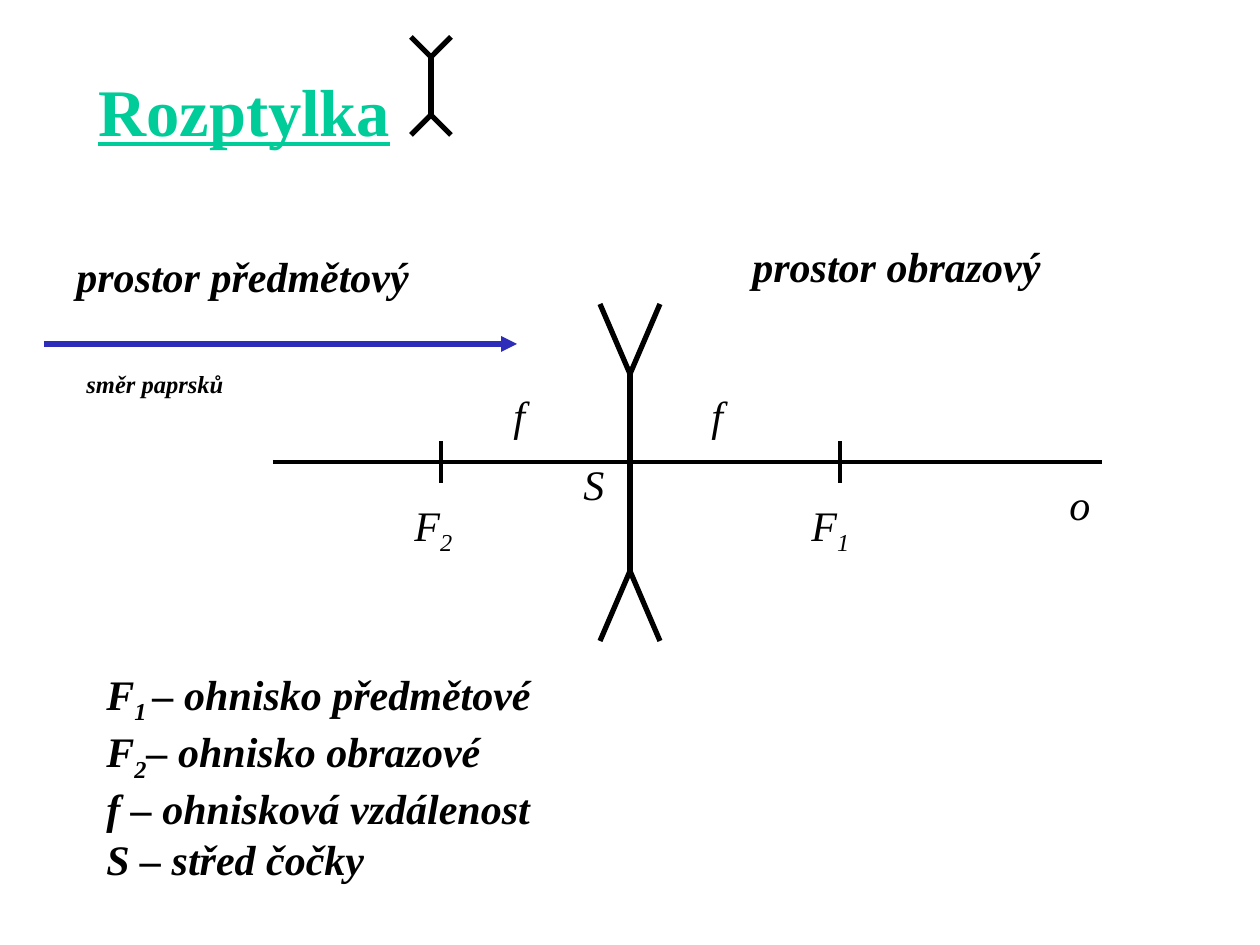
from lxml.etree import SubElement
from pptx import Presentation
from pptx.dml.color import RGBColor
from pptx.enum.shapes import MSO_CONNECTOR
from pptx.enum.text import MSO_ANCHOR
from pptx.oxml.ns import qn
from pptx.util import Inches, Pt

PX = Inches(1) / 126
BLACK = RGBColor(0x00, 0x00, 0x00)
GREEN = RGBColor(0x00, 0xCC, 0x99)
BLUE = RGBColor(0x2D, 0x2D, 0xB9)
FONT = "Times New Roman"

prs = Presentation()
prs.slide_width = Inches(10)
prs.slide_height = Inches(7.5)
slide = prs.slides.add_slide(prs.slide_layouts[6])


def add_line(shapes, start, end, width, color=BLACK):
    ends = [round(v * PX) for v in (*start, *end)]
    line = shapes.add_connector(MSO_CONNECTOR.STRAIGHT, *ends)
    line.line.color.rgb = color
    line.line.width = Pt(width)
    SubElement(line._element.spPr, qn("a:effectLst"))
    return line


def add_text(box, paragraphs, size=24, bold=False, italic=True, color=BLACK, wrap=True):
    """Each paragraph is a list of runs; every second run is a subscript."""
    frame = slide.shapes.add_textbox(*[round(v * PX) for v in box]).text_frame
    frame.word_wrap = wrap
    for i, runs in enumerate(paragraphs):
        paragraph = frame.paragraphs[0] if i == 0 else frame.add_paragraph()
        for j, text in enumerate(runs):
            run = paragraph.add_run()
            run.text = text
            run.font.name = FONT
            run.font.size = Pt(size)
            run.font.bold = bold
            run.font.italic = italic
            run.font.color.rgb = color
            if j % 2:
                run._r.get_or_add_rPr().set("baseline", "-25000")
    return frame


# Title
title = add_text((86, 55, 1071, 110), [["Rozptylka"]], 38, bold=True, italic=False, color=GREEN)
title.vertical_anchor = MSO_ANCHOR.MIDDLE
title.paragraphs[0].runs[0].font.underline = True

# Optical axis with the two foci
AXIS_Y = 462
add_line(slide.shapes, (273, AXIS_Y), (1102, AXIS_Y), 2.25)
for focus_x in (441, 840):
    add_line(slide.shapes, (focus_x, AXIS_Y - 21), (focus_x, AXIS_Y + 21), 2.25)

# Direction of the rays
rays = add_line(slide.shapes, (44, 344), (517, 344), 3, BLUE)
SubElement(rays.line._get_or_add_ln(), qn("a:tailEnd"), type="triangle")

# Diverging lens symbols: centre x, arm width, outer top, stem top, stem bottom, outer bottom
for x, arm, top, stem_top, stem_bottom, bottom in (
    (431, 20, 37, 57, 115, 135),
    (630, 30, 304, 374, 571, 641),
):
    lens = slide.shapes.add_group_shape().shapes
    add_line(lens, (x, stem_top), (x, stem_bottom), 3)
    for side in (-arm, arm):
        add_line(lens, (x + side, top), (x, stem_top), 3)
        add_line(lens, (x, stem_bottom), (x + side, bottom), 3)

# Captions of the two spaces and of the rays
add_text((64, 244, 383, 63), [["prostor předmětový"]], bold=True, wrap=False)
add_text((740, 234, 456, 63), [["prostor obrazový"]], bold=True)
add_text((74, 363, 456, 43), [["směr paprsků"]], 14, bold=True)

# Labels along the axis
for x, y, width, runs in (
    (799, 493, 113, ["F", "1"]),
    (402, 493, 81, ["F", "2"]),
    (571, 452, 82, ["S"]),
    (1057, 472, 81, ["o"]),
    (501, 383, 69, ["f"]),
    (699, 383, 69, ["f"]),
):
    add_text((x, y, width, 64), [runs])

# Legend
add_text(
    (94, 662, 466, 217),
    [
        ["F", "1 ", "– ohnisko předmětové"],
        ["F", "2", "– ohnisko obrazové"],
        ["f – ohnisková vzdálenost"],
        ["S – střed čočky"],
    ],
    bold=True,
    wrap=False,
)

prs.save("out.pptx")
